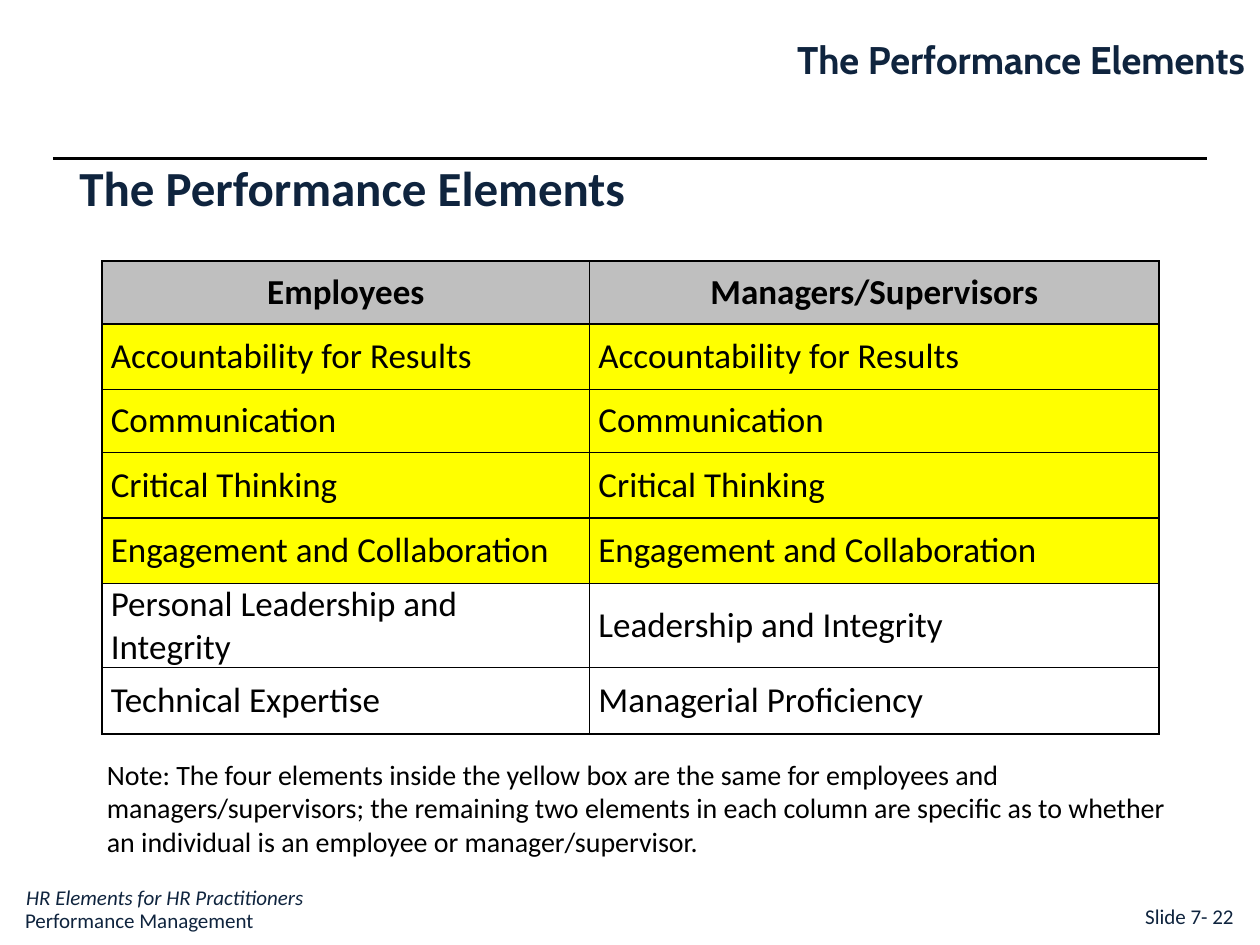
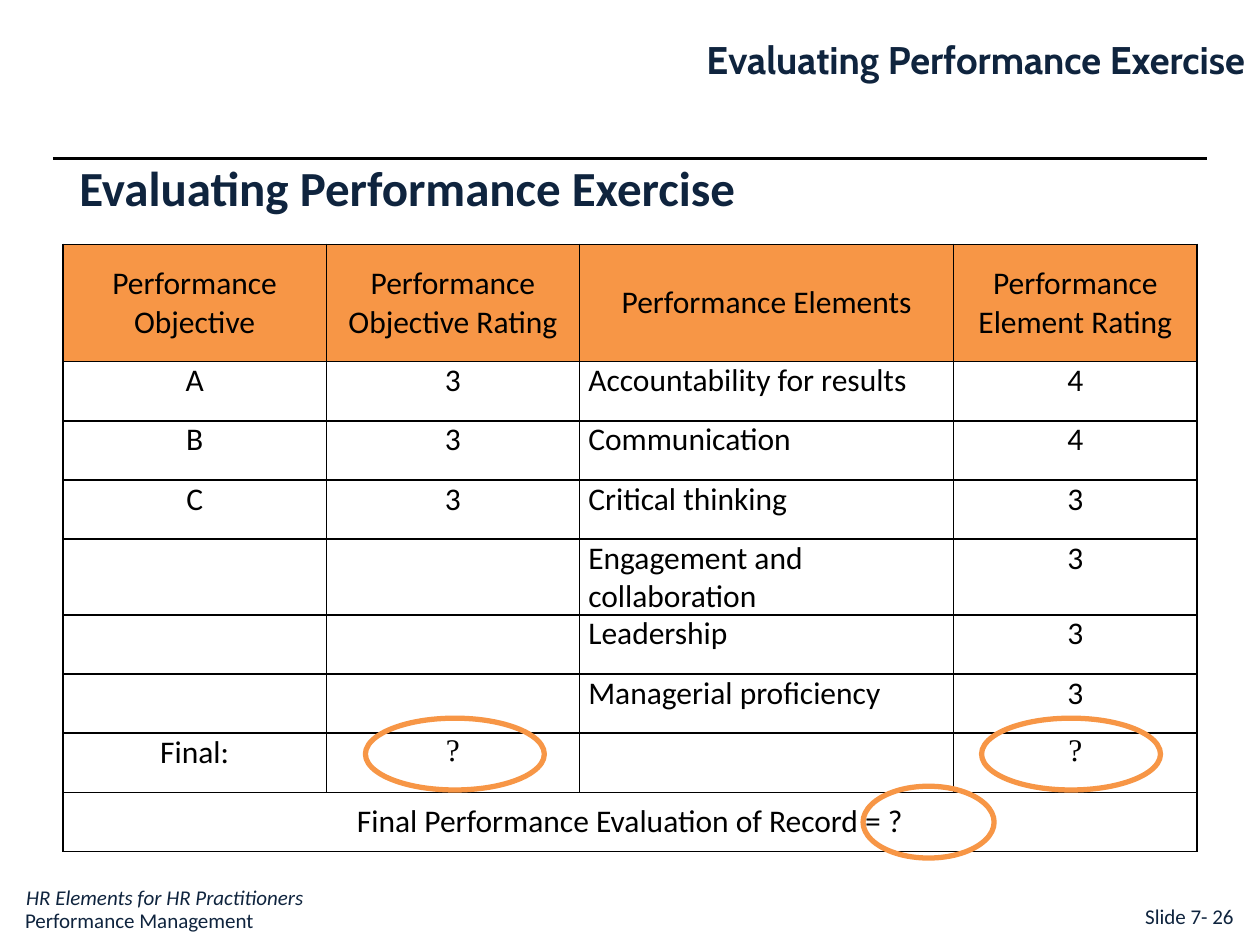
import pptx
import pptx.util
import pptx.dml.color
import pptx.enum.shapes
import pptx.enum.text
import pptx.oxml
import pptx.oxml.ns

Inches, Pt = pptx.util.Inches, pptx.util.Pt
RGB = pptx.dml.color.RGBColor.from_string
PP_ALIGN = pptx.enum.text.PP_ALIGN
ANCHOR = pptx.enum.text.MSO_ANCHOR
SHAPE = pptx.enum.shapes.MSO_SHAPE

COLORS = {"navy": "0F243E", "black": "000000", "white": "FFFFFF",
          "gray": "BFBFBF", "yellow": "FFFF00", "orange": "F79646"}


def write(tf, text, size, color="navy", font="Calibri", bold=False,
          italic=False, align=PP_ALIGN.LEFT):
    """Put one formatted run in the first paragraph of a text frame."""
    tf.word_wrap = True
    p = tf.paragraphs[0]
    p.alignment = align
    p.space_before = Pt(0)
    r = p.add_run()
    r.text = text
    r.font.name = font
    r.font.size = Pt(size)
    r.font.bold = bold
    r.font.italic = italic
    r.font.color.rgb = RGB(COLORS[color])


def style_cell(cell, fill, anchor):
    """Set margins, black 1 pt borders and fill of a table cell."""
    cell.margin_left = cell.margin_right = Inches(0.07)
    cell.margin_top = cell.margin_bottom = 0
    cell.vertical_anchor = anchor
    tcPr = cell._tc.get_or_add_tcPr()
    for side in ("lnL", "lnR", "lnT", "lnB"):
        tcPr.append(pptx.oxml.parse_xml(
            f'<a:{side} {pptx.oxml.ns.nsdecls("a")} w="12700"><a:solidFill>'
            f'<a:srgbClr val="{COLORS["black"]}"/></a:solidFill></a:{side}>'))
    if fill:
        cell.fill.solid()
        cell.fill.fore_color.rgb = RGB(COLORS[fill])
    else:
        cell.fill.background()


prs = pptx.Presentation()
prs.slide_width, prs.slide_height = Inches(10), Inches(7.5)

# Heading, running head, rule and footer of both slides
slides = []
for heading, number in (("The Performance Elements", 22),
                        ("Evaluating Performance Exercise", 26)):
    s = prs.slides.add_slide(prs.slide_layouts[5])
    slides.append(s)

    line = s.shapes.add_connector(pptx.enum.shapes.MSO_CONNECTOR.STRAIGHT,
                                  Inches(0.42), Inches(1.26), Inches(9.58), Inches(1.26))
    line.line.color.rgb = RGB(COLORS["black"])
    line.line.width = Pt(1.5)
    line._element.spPr.append(pptx.oxml.parse_xml(
        f'<a:effectLst {pptx.oxml.ns.nsdecls("a")}/>'))

    title = s.shapes.title
    title.left, title.top, title.width, title.height = map(Inches, (0.53, 1.07, 8.02, 0.7))
    title.text_frame.vertical_anchor = ANCHOR.BOTTOM
    write(title.text_frame, heading, 28, bold=True)

    for box, text, style in (
            ((3.94, 0.24, 6.04, 0.47), heading,
             dict(size=22, font="Cabin", bold=True, align=PP_ALIGN.RIGHT)),
            ((0.11, 6.97, 2.43, 0.4), "HR Elements for HR Practitioners",
             dict(size=12, italic=True)),
            ((0.1, 7.15, 2.21, 0.3), "Performance Management", dict(size=12)),
            ((8.99, 7.12, 0.99, 0.3), f"Slide 7- {number}", dict(size=12))):
        sp = s.shapes.add_textbox(*map(Inches, box))
        write(sp.text_frame, text, **style)

elements_slide, exercise_slide = slides

# Elements table: header, shared elements in yellow, specific ones in white
elements = [("Employees", "Managers/Supervisors")]
elements += [(name, name) for name in (
    "Accountability for Results", "Communication",
    "Critical Thinking", "Engagement and Collaboration")]
elements += [("Personal Leadership and Integrity", "Leadership and Integrity"),
             ("Technical Expertise", "Managerial Proficiency")]
row_fills = ["gray"] + ["yellow"] * 4 + [None] * 2

# Exercise table: the last row spans all columns
ratings = [
    ("Performance Objective", "Performance Objective Rating",
     "Performance Elements", "Performance Element Rating"),
    ("A", "3", "Accountability for results", "4"),
    ("B", "3", "Communication", "4"),
    ("C", "3", "Critical thinking", "3"),
    ("", "", "Engagement and collaboration", "3"),
    ("", "", "Leadership", "3"),
    ("", "", "Managerial proficiency", "3"),
    ("Final:", "?", "", "?"),
    ("Final Performance Evaluation of Record = ?", "", "", ""),
]
last = len(ratings) - 1

for s, rows, (left, top), widths, heights in (
        (elements_slide, elements, (0.81, 2.07), (3.87, 4.52),
         (0.5, 0.52, 0.5, 0.52, 0.52, 0.63, 0.53)),
        (exercise_slide, ratings, (0.5, 1.94), (2.09, 2.01, 2.97, 1.93),
         [0.93] + [0.47] * last)):
    table = s.shapes.add_table(len(rows), len(widths), Inches(left), Inches(top),
                               Inches(sum(widths)), Inches(sum(heights))).table
    table.first_row = table.horz_banding = False
    for column, width in zip(table.columns, widths):
        column.width = Inches(width)
    for row, height in zip(table.rows, heights):
        row.height = Inches(height)

    is_exercise = s is exercise_slide
    if is_exercise:
        table.cell(last, 0).merge(table.cell(last, len(widths) - 1))
    for i, row in enumerate(rows):
        for j, text in enumerate(row):
            cell = table.cell(i, j)
            if is_exercise:
                fill = "orange" if i == 0 else None
                anchor = ANCHOR.MIDDLE if i in (0, last) else ANCHOR.TOP
                centered = i == 0 or j != 2
            else:
                fill, anchor, centered = row_fills[i], ANCHOR.MIDDLE, i == 0
            style_cell(cell, fill, anchor)
            if text:
                write(cell.text_frame, text, 18 if is_exercise else 20, "black",
                      font="Times New Roman" if text == "?" else "Calibri",
                      bold=i == 0 and not is_exercise,
                      align=PP_ALIGN.CENTER if centered else PP_ALIGN.LEFT)

# Note under the elements table
sp = elements_slide.shapes.add_textbox(Inches(0.75), Inches(5.96), Inches(8.62), Inches(0.91))
write(sp.text_frame,
      "Note: The four elements inside the yellow box are the same for employees and "
      "managers/supervisors; the remaining two elements in each column are specific "
      "as to whether an individual is an employee or manager/supervisor.", 16, "black")

# Rings around the open ratings
for left, top, width in ((2.9, 5.7, 1.42), (7.79, 5.7, 1.42), (6.85, 6.24, 1.04)):
    ring = exercise_slide.shapes.add_shape(SHAPE.OVAL, Inches(left), Inches(top),
                                           Inches(width), Inches(0.57))
    ring.shadow.inherit = False
    ring.fill.background()
    ring.line.color.rgb = RGB(COLORS["orange"])
    ring.line.width = Pt(3)

prs.save("out.pptx")
